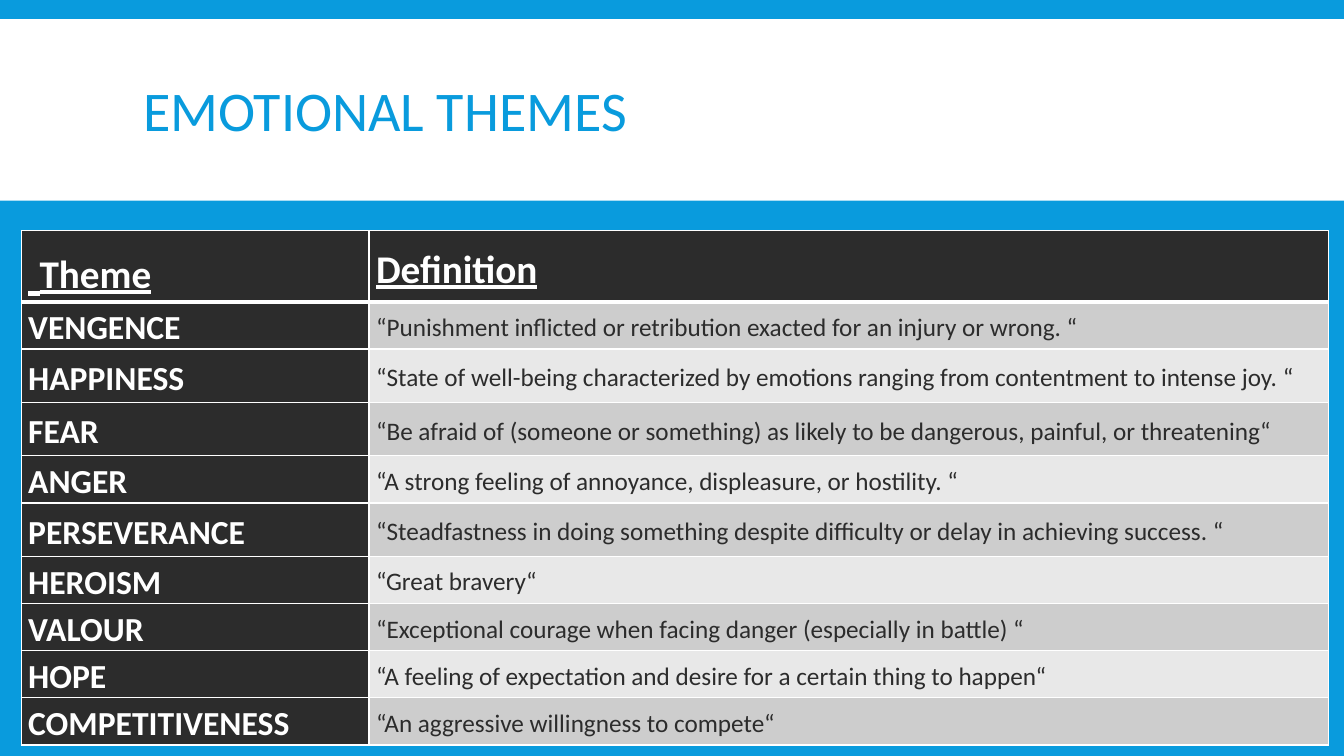
"""Build the emotional themes slide: a title band above a table of definitions."""
from lxml.etree import SubElement
from pptx import Presentation
from pptx.dml.color import RGBColor
from pptx.enum.shapes import MSO_SHAPE as Shape
from pptx.enum.text import MSO_ANCHOR as Anchor
from pptx.oxml.ns import qn
from pptx.util import Inches, Pt

TITLE = "EMOTIONAL THEMES"
HEADINGS = ("Theme", "Definition")
THEMES = [
    ("VENGENCE", "“Punishment inflicted or retribution exacted for an injury or wrong. “", 0.27),
    ("HAPPINESS", "“State of well-being characterized by emotions ranging from contentment to intense joy. “", 0.53),
    ("FEAR", "“Be afraid of (someone or something) as likely to be dangerous, painful, or threatening“", 0.53),
    ("ANGER", "“A strong feeling of annoyance, displeasure, or hostility. “", 0.45),
    ("PERSEVERANCE", "“Steadfastness in doing something despite difficulty or delay in achieving success. “", 0.53),
    ("HEROISM", "“Great bravery“", 0.42),
    ("VALOUR", "“Exceptional courage when facing danger (especially in battle) “", 0.28),
    ("HOPE", "“A feeling of expectation and desire for a certain thing to happen“", 0.34),
    ("COMPETITIVENESS", "“An aggressive willingness to compete“", 0.44),
]
WIDTH, HEIGHT = 13.33, 7.5
BAND = (0, 0.19, WIDTH, 1.8)
TITLE_BOX = (1.32, 0.31, 10.7, 1.65)
TABLE_LEFT, TABLE_TOP = 0.21, 2.29
COLUMNS = (3.45, 9.52)
HEADER_HEIGHT = 0.57
BLUE, WHITE, DARK = "099BDD", "FFFFFF", "2C2C2C"
STRIPES = ("CDCDCD", "E8E8E8")
HEADING = {"size": Pt(28), "bold": True, "underline": True}
LEAD = {**HEADING, "size": Pt(36)}
THEME = {"size": Pt(24), "bold": True}
DEFINITION = {"size": Pt(18), "bold": False}
CELL = {"margin_left": Inches(0.07), "margin_right": Inches(0.07),
        "margin_top": 0, "margin_bottom": 0, "vertical_anchor": Anchor.MIDDLE}


def paint(fill, color):
    """Make a fill solid in the given hex colour."""
    fill.solid()
    fill.fore_color.rgb = RGBColor.from_string(color)


def apply(target, values):
    """Set each named attribute on the target."""
    for name, value in values.items():
        setattr(target, name, value)


def write(paragraph, text, color, style, spacing):
    """Add a formatted run to a paragraph."""
    paragraph.line_spacing = spacing
    run = paragraph.add_run()
    run.text = text
    apply(run.font, {"name": "Calibri", **style})
    paint(run.font.fill, color)


def outline(cell, widths):
    """Draw white borders on a cell, ahead of its fill."""
    properties = cell._tc.get_or_add_tcPr()
    for place, (side, width) in enumerate(widths.items()):
        border = SubElement(properties, qn(f"a:ln{side}"), w=str(Pt(width)))
        solid = SubElement(border, qn("a:solidFill"))
        SubElement(solid, qn("a:srgbClr"), val=WHITE)
        properties.insert(place, border)


def fill_cell(cell, runs, color, background, widths):
    """Give a cell its text, margins, fill and borders."""
    apply(cell, CELL)
    for text, style in runs:
        write(cell.text_frame.paragraphs[0], text, color, style, 1.15)
    paint(cell.fill, background)
    outline(cell, widths)


def add_title(slide):
    """Place the title on its white band."""
    title = slide.shapes.title
    apply(title, dict(zip(("left", "top", "width", "height"), map(Inches, TITLE_BOX))))
    title.text_frame.vertical_anchor = Anchor.MIDDLE
    heading = title.text_frame.paragraphs[0]
    heading.alignment = 1
    write(heading, TITLE, BLUE, {"size": Pt(40)}, 0.85)
    band = slide.shapes.add_shape(Shape.RECTANGLE, *map(Inches, BAND))
    band.shadow.inherit = False
    paint(band.fill, WHITE)
    band.line.fill.background()
    title._element.addprevious(band._element)


def add_themes(slide):
    """Add the table of themes and their definitions."""
    heights = [HEADER_HEIGHT] + [height for _, _, height in THEMES]
    box = (TABLE_LEFT, TABLE_TOP, sum(COLUMNS), sum(heights))
    table = slide.shapes.add_table(len(heights), len(COLUMNS), *map(Inches, box)).table
    for column, width in zip(table.columns, COLUMNS):
        column.width = Inches(width)
    for row, height in zip(table.rows, heights):
        row.height = Inches(height)
    edges = {"L": 1, "R": 1, "T": 1, "B": 1}
    header_edges = {**edges, "B": 3}
    theme, definition = HEADINGS
    fill_cell(table.cell(0, 0), [(" ", LEAD), (theme, HEADING)], WHITE, DARK, header_edges)
    table.cell(0, 0).vertical_anchor = Anchor.TOP
    fill_cell(table.cell(0, 1), [(definition, HEADING)], WHITE, DARK, header_edges)
    for row, (theme, definition, _) in enumerate(THEMES, 1):
        top_edges = {**edges, "T": 3 if row == 1 else 1}
        stripe = STRIPES[(row - 1) % len(STRIPES)]
        fill_cell(table.cell(row, 0), [(theme, THEME)], WHITE, DARK, top_edges)
        fill_cell(table.cell(row, 1), [(definition, DEFINITION)], DARK, stripe, top_edges)


def main():
    """Create and save the presentation."""
    deck = Presentation()
    deck.slide_width, deck.slide_height = Inches(WIDTH), Inches(HEIGHT)
    slide = deck.slides.add_slide(deck.slide_layouts[5])
    paint(slide.background.fill, BLUE)
    add_title(slide)
    add_themes(slide)
    deck.save("out.pptx")


if __name__ == "__main__":
    main()
